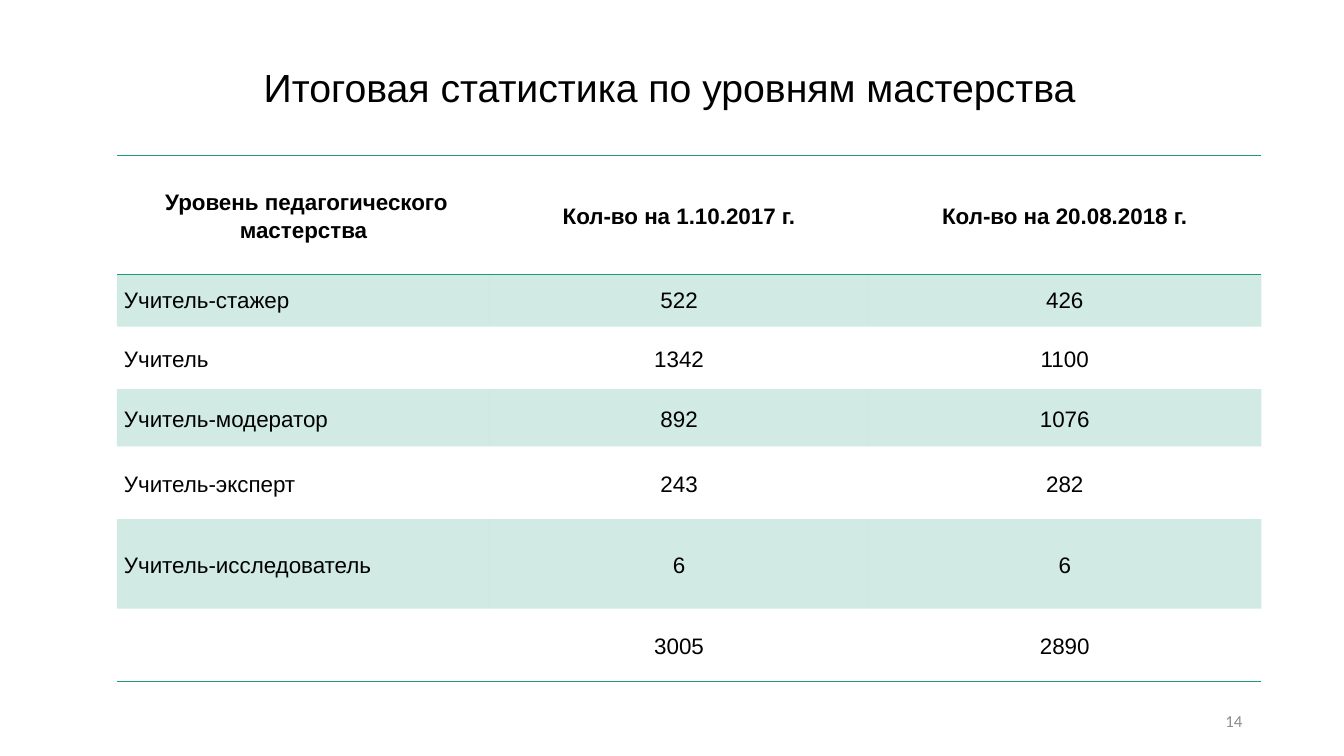
"""Build a slide with a table of teacher counts by skill level."""
from lxml import etree
from pptx import Presentation
from pptx.dml.color import RGBColor
from pptx.enum.text import MSO_ANCHOR, PP_ALIGN
from pptx.oxml.ns import qn

PX = 9144
MID = MSO_ANCHOR.MIDDLE
LEFT, MIDST, RIGHT = PP_ALIGN.LEFT, PP_ALIGN.CENTER, PP_ALIGN.RIGHT
GREEN = "1D9A78"
PLAIN = "{2D5ABB26-0587-4C30-8999-92F81FD0307C}"


def write(frame, text, size=16, font="Arial", color="000000", bold=False,
          align=MIDST, space=1.15):
    frame.word_wrap = True
    par = frame.paragraphs[0]
    par.alignment = align
    par.line_spacing = space
    run = par.add_run()
    run.text = text
    run.font.size = size * 12700
    run.font.name = font
    run.font.bold = bold
    run.font.color.rgb = RGBColor.from_string(color)


def rule(cell, side):
    line = etree.Element(qn("a:" + side), w="12700")
    fill = etree.SubElement(line, qn("a:solidFill"))
    etree.SubElement(fill, qn("a:srgbClr"), val=GREEN)
    cell._tc.get_or_add_tcPr().insert(0, line)


deck = Presentation()
deck.slide_width, deck.slide_height = 1333 * PX, 750 * PX
slide = deck.slides.add_slide(deck.slide_layouts[5])

page = slide.shapes.add_textbox(942 * PX, 695 * PX, 300 * PX, 40 * PX)
page.text_frame.vertical_anchor = MID
write(page.text_frame, "14", size=12, font="Calibri", color="8C8C8C",
      align=RIGHT, space=1.0)

title = slide.shapes.title
title.left, title.top = 60 * PX, 63 * PX
title.width, title.height = 1208 * PX, 53 * PX
title.text_frame.vertical_anchor = MID
write(title.text_frame, "Итоговая статистика по уровням мастерства",
      size=28, space=0.9)

rows = [
    (118, " Уровень педагогического мастерства",
     "Кол-во на 1.10.2017 г.", "Кол-во на 20.08.2018 г."),
    (52, "Учитель-стажер", "522", "426"),
    (62, "Учитель", "1342", "1100"),
    (57, "Учитель-модератор", "892", "1076"),
    (72, "Учитель-эксперт", "243", "282"),
    (89, "Учитель-исследователь", "6", "6"),
    (72, "", "3005", "2890"),
]
widths = [370, 375, 390]
last = len(rows) - 1
frame = slide.shapes.add_table(len(rows), len(widths), 116 * PX, 154 * PX,
                               sum(widths) * PX,
                               sum(row[0] for row in rows) * PX)
table = frame.table
table._tbl.tblPr.find(qn("a:tableStyleId")).text = PLAIN
table.horz_banding = False
for col, width in enumerate(widths):
    table.columns[col].width = width * PX

for num, (height, *texts) in enumerate(rows):
    table.rows[num].height = height * PX
    for col, text in enumerate(texts):
        cell = table.cell(num, col)
        cell.vertical_anchor = MID
        cell.margin_left = cell.margin_right = 7 * PX
        cell.margin_top = cell.margin_bottom = 0
        if text:
            write(cell.text_frame, text, bold=num == 0,
                  align=LEFT if num and col == 0 else MIDST,
                  space=1.0 if num == 1 else 1.15)
        if num % 2:
            cell.fill.solid()
            cell.fill.fore_color.rgb = RGBColor.from_string(GREEN)
            tint = cell._tc.tcPr.find(".//" + qn("a:srgbClr"))
            etree.SubElement(tint, qn("a:alpha"), val="20000")
        else:
            cell.fill.background()
        if num in (0, last):
            rule(cell, "lnB")
        if num == 0:
            rule(cell, "lnT")

deck.save("out.pptx")
